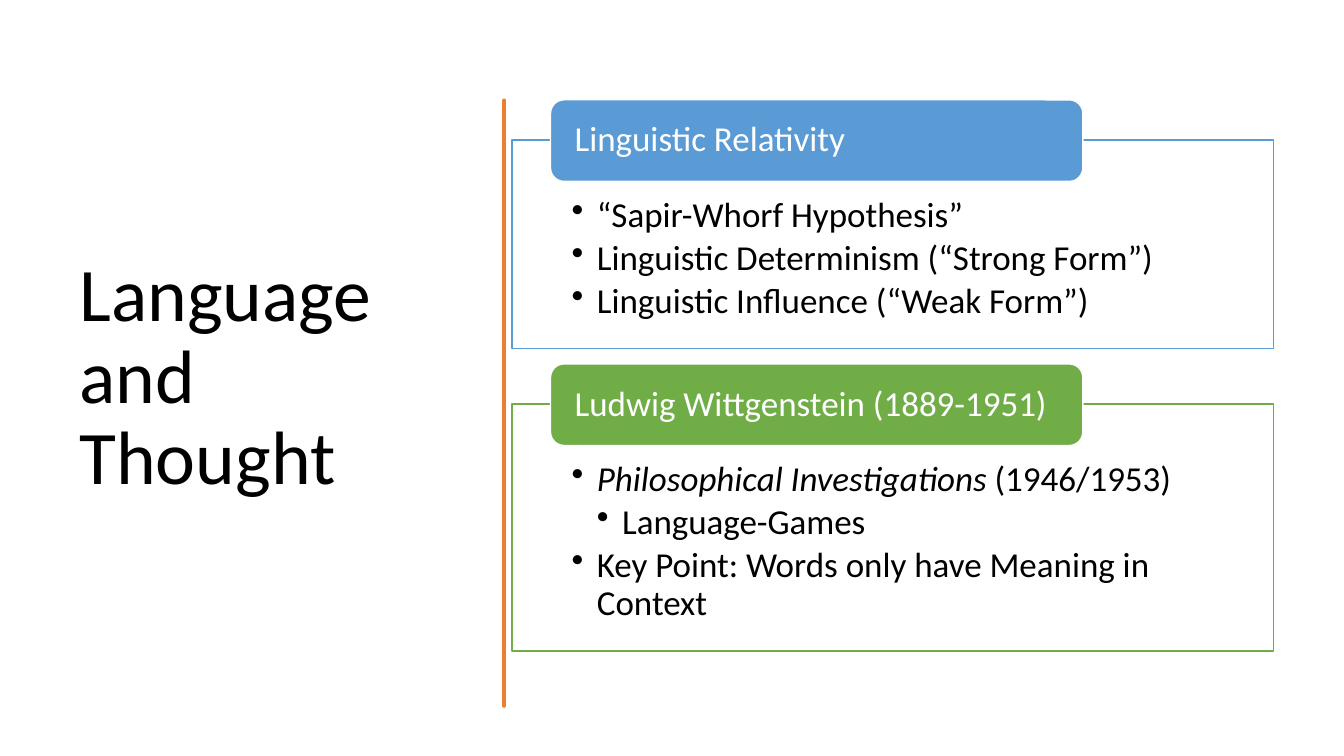
import math
from lxml import etree
from pptx import Presentation
from pptx.dml.color import RGBColor
from pptx.enum import shapes, text
from pptx.oxml.ns import qn
from pptx.util import Inches, Pt

TITLE = "Language and Thought"
# Each section: heading, colour, frame top, frame height, bullets
# Each bullet: level, list of (words, italic)
SECTIONS = [
    ("Linguistic Relativity", "blue", 1.39, 2.07, [
        (1, [("“Sapir-Whorf Hypothesis”", False)]),
        (1, [("Linguistic Determinism (“Strong Form”)", False)]),
        (1, [("Linguistic Influence (“Weak Form”)", False)]),
    ]),
    ("Ludwig Wittgenstein (1889-1951)", "green", 4.01, 2.45, [
        (1, [("Philosophical Investigations", True), (" (1946/1953)", False)]),
        (2, [("Language-Games", False)]),
        (1, [("Key Point: Words only have Meaning in Context", False)]),
    ]),
]
COLORS = {"blue": "5B9BD5", "green": "70AD47", "orange": "ED7D31",
          "white": "FFFFFF", "black": "000000"}
FONT = "Calibri"
FRAME_LEFT, FRAME_WIDTH = 5.08, 7.55
TAB_LEFT, TAB_WIDTH, TAB_HEIGHT, TAB_RISE = 5.46, 5.28, 0.81, 0.4
BULLET_STEP = 0.25
RULE_X, RULE_TOP, RULE_BOTTOM, RULE_STEPS = 4.74, 0.84, 6.76, 60


def rgb(name):
    return RGBColor.from_string(COLORS[name])


def paint(shape, fill, line, width):
    shape.shadow.inherit = False
    shape.fill.solid()
    shape.fill.fore_color.rgb = rgb(fill)
    shape.line.color.rgb = rgb(line)
    shape.line.width = Pt(width)


def set_frame(shape, anchor, left, top, right, bottom):
    frame = shape.text_frame
    frame.word_wrap = True
    frame.vertical_anchor = anchor
    frame.margin_left, frame.margin_top = Inches(left), Inches(top)
    frame.margin_right, frame.margin_bottom = Inches(right), Inches(bottom)
    return frame


def style(para, size, color):
    para.alignment = text.PP_ALIGN.LEFT
    para.line_spacing = 0.9
    para.font.name, para.font.size = FONT, Pt(size)
    para.font.color.rgb = rgb(color)


def add_bullet(para, level):
    props = para._p.get_or_add_pPr()
    props.set("marL", str(Inches(BULLET_STEP * level)))
    props.set("indent", str(-Inches(BULLET_STEP)))
    bullet = etree.Element(qn("a:buChar"), char="•")
    props.insert_element_before(bullet, "a:tabLst", "a:defRPr", "a:extLst")


deck = Presentation()
deck.slide_width, deck.slide_height = Inches(13.33), Inches(7.5)
page = deck.slides.add_slide(deck.slide_layouts[6])

# Title
box = page.shapes.add_textbox(Inches(0.69), Inches(0.7), Inches(3.74), Inches(6.11))
para = set_frame(box, text.MSO_ANCHOR.MIDDLE, 0.1, 0.05, 0.1, 0.05).paragraphs[0]
para.text = TITLE
style(para, 54, "black")

# Hand-drawn vertical rule: down the right edge, back up the left
right_edge, left_edge = [], []
for step in range(RULE_STEPS + 1):
    y = RULE_TOP + (RULE_BOTTOM - RULE_TOP) * step / RULE_STEPS
    right_edge.append((RULE_X + 0.01 + 0.01 * math.sin(4 * (y - RULE_TOP)), y))
    left_edge.append((RULE_X - 0.01 - 0.01 * math.sin(5 * (y - RULE_TOP)), y))
outline = right_edge + left_edge[::-1]
builder = page.shapes.build_freeform(*outline[0], scale=Inches(1))
builder.add_line_segments(outline[1:], close=True)
paint(builder.convert_to_shape(), "orange", "orange", 3.25)

# Framed sections with heading tabs
for heading, color, top, height, bullets in SECTIONS:
    frame_box = page.shapes.add_shape(
        shapes.MSO_SHAPE.RECTANGLE, Inches(FRAME_LEFT), Inches(top),
        Inches(FRAME_WIDTH), Inches(height))
    paint(frame_box, "white", color, 1)
    fill_color = frame_box.fill._xPr.find(".//" + qn("a:srgbClr"))
    etree.SubElement(fill_color, qn("a:alpha"), val="90000")
    frame = set_frame(frame_box, text.MSO_ANCHOR.TOP, 0.59, 0.57, 0.59, 0.19)
    for index, (level, spans) in enumerate(bullets):
        para = frame.add_paragraph() if index else frame.paragraphs[0]
        style(para, 25, "black")
        para.space_after = Pt(3.75)
        add_bullet(para, level)
        for words, italic in spans:
            span = para.add_run()
            span.text = words
            if italic:
                span.font.italic = True

    tab = page.shapes.add_shape(
        shapes.MSO_SHAPE.ROUNDED_RECTANGLE, Inches(TAB_LEFT), Inches(top - TAB_RISE),
        Inches(TAB_WIDTH), Inches(TAB_HEIGHT))
    paint(tab, color, "white", 1)
    para = set_frame(tab, text.MSO_ANCHOR.MIDDLE, 0.2, 0, 0.2, 0).paragraphs[0]
    para.text = heading
    style(para, 25, "white")

deck.save("out.pptx")
